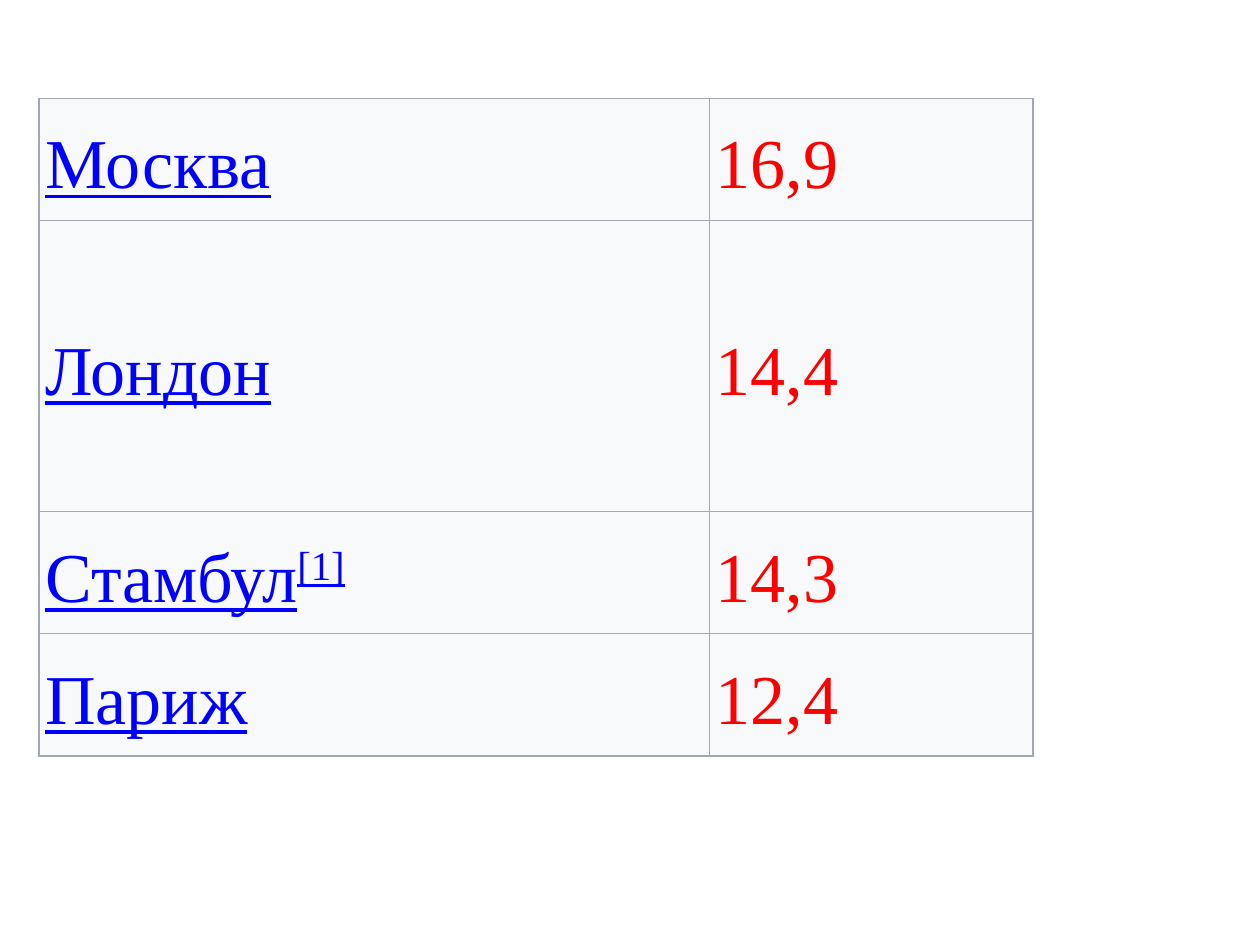
from lxml import etree
from pptx import Presentation
from pptx import util as u
from pptx.dml.color import RGBColor
from pptx.enum import text
from pptx.oxml.ns import qn

COLORS = {"city": "0000FF", "population": "FF0000", "cell": "F8F9FA", "border": "A2A9B1"}
FONT = "Times New Roman"
CITIES = [
    ("Москва", "", "16,9"),
    ("Лондон", "", "14,4"),
    ("Стамбул", "[1]", "14,3"),
    ("Париж", "", "12,4"),
]
COLUMN_WIDTHS = [5.32, 2.57]
ROW_HEIGHTS = [0.97, 2.31, 0.97, 0.97]


def add_text(para, words, color, size=40, underline=False, raised=False):
    span = para.add_run()
    span.text = words
    font = span.font
    font.name = FONT
    font.size = u.Pt(size)
    font.underline = underline
    font.color.rgb = RGBColor.from_string(COLORS[color])
    if raised:
        font._element.set("baseline", "30000")


def set_borders(cell, color, width):
    properties = cell._tc.get_or_add_tcPr()
    for position, side in enumerate(("lnL", "lnR", "lnT", "lnB")):
        line = etree.Element(qn(f"a:{side}"), w=str(u.Pt(width)))
        fill = etree.SubElement(line, qn("a:solidFill"))
        etree.SubElement(fill, qn("a:srgbClr"), val=COLORS[color])
        properties.insert(position, line)


def format_cell(cell):
    """Style the cell and return its paragraph, ready for text."""
    cell.fill.solid()
    cell.fill.fore_color.rgb = RGBColor.from_string(COLORS["cell"])
    set_borders(cell, "border", 1)
    cell.vertical_anchor = text.MSO_ANCHOR.MIDDLE
    cell.margin_left = cell.margin_right = u.Inches(0.05)
    cell.margin_top = cell.margin_bottom = u.Inches(0.02)
    para = cell.text_frame.paragraphs[0]
    para.line_spacing = 1.15
    para.space_before = para.space_after = u.Pt(12)
    return para


def add_city_table(page):
    table = page.shapes.add_table(
        len(CITIES), len(COLUMN_WIDTHS), u.Inches(0.31), u.Inches(0.78),
        u.Inches(sum(COLUMN_WIDTHS)), u.Inches(sum(ROW_HEIGHTS)),
    ).table
    table.first_row = table.horz_banding = False
    for column, width in zip(table.columns, COLUMN_WIDTHS):
        column.width = u.Inches(width)
    for row, height, (city, note, population) in zip(table.rows, ROW_HEIGHTS, CITIES):
        row.height = u.Inches(height)
        city_para, population_para = [format_cell(cell) for cell in row.cells]
        add_text(city_para, city, "city", underline=True)
        if note:
            add_text(city_para, note, "city", underline=True, raised=True)
        add_text(population_para, population, "population")


def main():
    deck = Presentation()
    deck.slide_width, deck.slide_height = u.Inches(10), u.Inches(7.5)
    page = deck.slides.add_slide(deck.slide_layouts.get_by_name("Blank"))
    add_city_table(page)
    deck.save("out.pptx")


if __name__ == "__main__":
    main()
